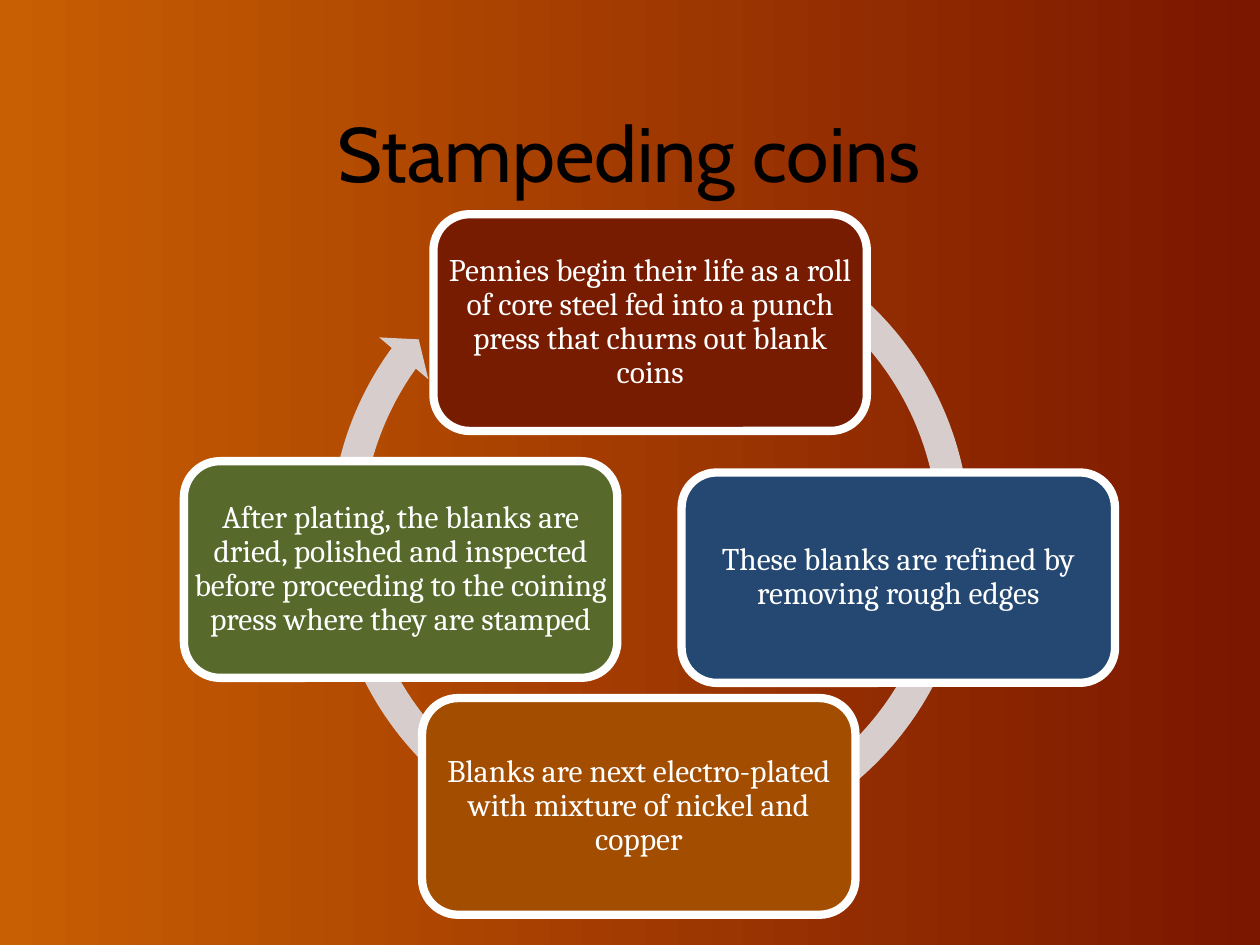
import pptx
import pptx.dml.color
import pptx.enum.shapes
import pptx.enum.text
import pptx.util
from pptx.util import Inches

COLORS = {
    "orange": "C85F02", "maroon": "7B1600", "ring": "D6CDCC",
    "red": "771C00", "green": "576A2C", "amber": "A24D00", "blue": "244872",
    "white": "FFFFFF", "black": "000000",
}
STEPS = [
    ("red", 3.44, 1.7, 1.72,
     "Pennies begin their life as a roll of core steel fed into a punch press "
     "that churns out blank coins"),
    ("green", 1.46, 3.66, 1.72,
     "After plating, the blanks are dried, polished and inspected before "
     "proceeding to the coining press where they are stamped"),
    ("amber", 3.35, 5.54, 1.72,
     "Blanks are next electro-plated with mixture of nickel and copper"),
    ("blue", 5.41, 3.75, 1.67,
     "These blanks are refined by removing rough edges"),
]
STEP_WIDTH = 3.44
RING_ADJUSTMENTS = (0.047, 2.729, 129.548, 179.472, 0.048)


def rgb(name):
    """Return the named colour."""
    return pptx.dml.color.RGBColor.from_string(COLORS[name])


def add_text(slide, box, text, *, font, size, color, anchor, insets, spacing=1.0):
    """Add a centred, wrapping text box."""
    frame = slide.shapes.add_textbox(*map(Inches, box)).text_frame
    frame.word_wrap = True
    frame.vertical_anchor = anchor
    frame.margin_left = frame.margin_right = Inches(insets[0])
    frame.margin_top = frame.margin_bottom = Inches(insets[1])
    paragraph = frame.paragraphs[0]
    paragraph.alignment = pptx.enum.text.PP_ALIGN.CENTER
    paragraph.line_spacing = spacing
    run = paragraph.add_run()
    run.text = text
    run.font.name = font
    run.font.size = pptx.util.Pt(size)
    run.font.color.rgb = rgb(color)


def add_filled_shape(slide, kind, box, color):
    """Add a flat preset shape without an outline."""
    shape = slide.shapes.add_shape(kind, *map(Inches, box))
    shape.shadow.inherit = False
    shape.fill.solid()
    shape.fill.fore_color.rgb = rgb(color)
    shape.line.fill.background()
    return shape


def paint_background(slide):
    """Fill the slide with a left-to-right gradient."""
    fill = slide.background.fill
    fill.gradient()
    fill.gradient_angle = 0
    for stop, position, color in zip(fill.gradient_stops, (0, 1), ("orange", "maroon")):
        stop.position = position
        stop.color.rgb = rgb(color)


def add_title(slide, box):
    """Place the slide title."""
    add_text(slide, box, "Stampeding coins", font="Cabin", size=44, color="black",
             anchor=pptx.enum.text.MSO_ANCHOR.BOTTOM, insets=(0.1, 0.05))


def add_ring(slide, box):
    """Draw the circular arrow behind the steps."""
    ring = add_filled_shape(
        slide, pptx.enum.shapes.MSO_SHAPE.CIRCULAR_ARROW, box, "ring")
    for index, value in enumerate(RING_ADJUSTMENTS):
        ring.adjustments[index] = value


def add_step(slide, box, color, text):
    """Place one rounded card with its description."""
    card = add_filled_shape(
        slide, pptx.enum.shapes.MSO_SHAPE.ROUNDED_RECTANGLE, box, color)
    card.line.color.rgb = rgb("white")
    card.line.width = pptx.util.Pt(4.72)
    add_text(slide, box, text, font="Cambria", size=18, color="white",
             anchor=pptx.enum.text.MSO_ANCHOR.MIDDLE, insets=(0.07, 0.07), spacing=0.9)


def main():
    """Build and save the presentation."""
    presentation = pptx.Presentation()
    presentation.slide_width = Inches(10)
    presentation.slide_height = Inches(7.5)
    slide = presentation.slides.add_slide(presentation.slide_layouts[6])
    paint_background(slide)
    add_title(slide, (1.89, 0.3, 6.21, 1.32))
    add_ring(slide, (2.49, 1.59, 5.34, 5.34))
    for color, left, top, height, text in STEPS:
        add_step(slide, (left, top, STEP_WIDTH, height), color, text)
    presentation.save("out.pptx")


if __name__ == "__main__":
    main()
